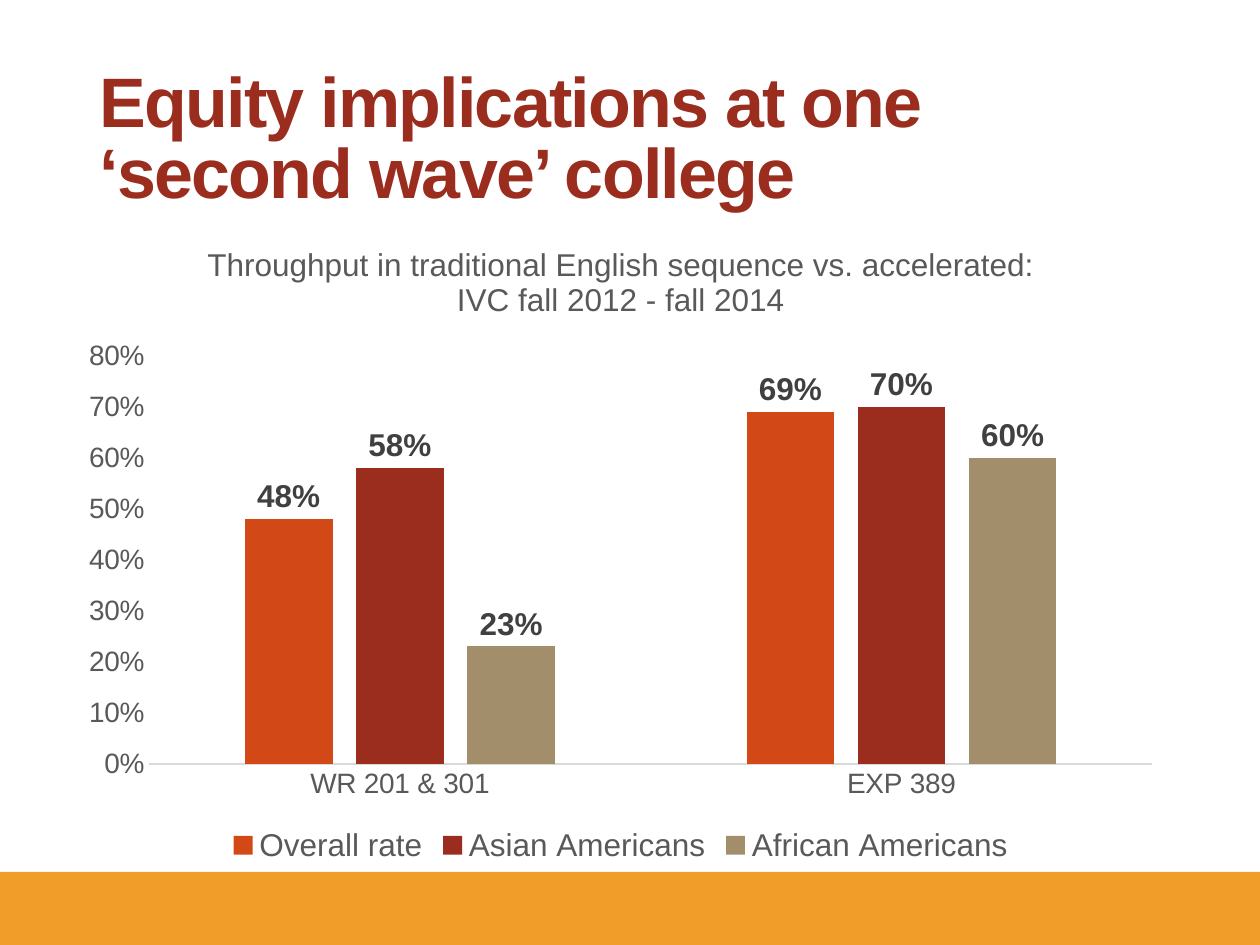
from dataclasses import dataclass

from pptx import Presentation
from pptx.chart.data import CategoryChartData
from pptx.dml.color import RGBColor as RGB
from pptx.enum.chart import XL_CHART_TYPE as ChartType
from pptx.enum.chart import XL_LABEL_POSITION as LabelPos
from pptx.enum.chart import XL_LEGEND_POSITION as LegendPos
from pptx.enum.chart import XL_TICK_MARK as Tick
from pptx.enum.shapes import MSO_SHAPE as Shape
from pptx.enum.text import MSO_ANCHOR as Anchor
from pptx.enum.text import MSO_AUTO_SIZE as AutoSize
from pptx.enum.text import PP_ALIGN as Align
from pptx.util import Pt


@dataclass(frozen=True)
class Theme:
    font: str = "Arial"
    red: str = "9B2D1F"
    orange: str = "D34817"
    tan: str = "A28E6A"
    band: str = "F09D2A"
    grey: str = "595959"
    dark: str = "404040"
    rule: str = "D9D9D9"
    title_size: float = 40
    title_leading: float = 41
    chart_size: float = 18
    axis_size: float = 16


@dataclass(frozen=True)
class Group:
    name: str
    rates: tuple[float, ...]
    color: str


THEME = Theme()
COURSES = ("WR 201 & 301", "EXP 389")
GROUPS = (
    Group("Overall rate", (0.48, 0.69), THEME.orange),
    Group("Asian Americans", (0.58, 0.70), THEME.red),
    Group("African Americans", (0.23, 0.60), THEME.tan),
)


def style_font(font, size: float, color: str, bold: bool = False) -> None:
    font.name = THEME.font
    font.size = Pt(size)
    font.bold = bold
    font.color.rgb = RGB.from_string(color)


def add_band(slide) -> None:
    sp = slide.shapes.add_shape(Shape.RECTANGLE, Pt(0), Pt(498.2), Pt(720), Pt(41.8))
    sp.shadow.inherit = False
    sp.fill.solid()
    sp.fill.fore_color.rgb = RGB.from_string(THEME.band)
    sp.line.fill.background()


def set_title(slide, text: str) -> None:
    sp = slide.shapes.title
    sp.left, sp.top, sp.width, sp.height = Pt(49.7), Pt(46.8), Pt(620.6), Pt(78.5)
    tf = sp.text_frame
    tf.word_wrap = True
    tf.auto_size = AutoSize.NONE
    tf.vertical_anchor = Anchor.BOTTOM
    p = tf.paragraphs[0]
    p.alignment = Align.LEFT
    p.line_spacing = Pt(THEME.title_leading)
    r = p.add_run()
    r.text = text
    style_font(r.font, THEME.title_size, THEME.red, bold=True)
    r.font._element.set("spc", "-100")  # tracking of -1 pt


def style_axes(chart) -> None:
    for axis in (chart.category_axis, chart.value_axis):
        axis.major_tick_mark = axis.minor_tick_mark = Tick.NONE
        axis.has_major_gridlines = False
        style_font(axis.tick_labels.font, THEME.axis_size, THEME.grey)
    line = chart.category_axis.format.line
    line.color.rgb = RGB.from_string(THEME.rule)
    line.width = Pt(0.75)
    values = chart.value_axis
    values.format.line.fill.background()
    values.minimum_scale, values.maximum_scale, values.major_unit = 0, 0.8, 0.1
    values.tick_labels.number_format = "0%"
    values.tick_labels.number_format_is_linked = False


def style_series(series, group: Group) -> None:
    series.format.fill.solid()
    series.format.fill.fore_color.rgb = RGB.from_string(group.color)
    series.invert_if_negative = False
    labels = series.data_labels
    labels.show_value = True
    labels.number_format = "0%"
    labels.number_format_is_linked = False
    labels.position = LabelPos.OUTSIDE_END
    style_font(labels.font, THEME.chart_size, THEME.dark, bold=True)


def add_rate_chart(slide, title: str) -> None:
    data = CategoryChartData(number_format="0%")
    data.categories = COURSES
    for group in GROUPS:
        data.add_series(group.name, group.rates)
    chart = slide.shapes.add_chart(
        ChartType.COLUMN_CLUSTERED, Pt(38.2), Pt(124.6), Pt(632.9), Pt(372.2), data
    ).chart
    style_font(chart.font, 10, "000000")

    # Chart title
    chart.has_title = True
    chart.chart_title.include_in_layout = False
    r = chart.chart_title.text_frame.paragraphs[0].add_run()
    r.text = title
    style_font(r.font, THEME.chart_size, THEME.grey)

    # Axes and columns
    style_axes(chart)
    plot = chart.plots[0]
    plot.gap_width, plot.overlap = 219, -27
    plot.vary_by_categories = False
    for series, group in zip(plot.series, GROUPS):
        style_series(series, group)

    # Legend
    chart.has_legend = True
    chart.legend.position = LegendPos.BOTTOM
    chart.legend.include_in_layout = False
    style_font(chart.legend.font, THEME.chart_size, THEME.grey)


def main() -> None:
    prs = Presentation()
    prs.slide_width, prs.slide_height = Pt(720), Pt(540)
    slide = prs.slides.add_slide(prs.slide_layouts[5])  # title only
    add_band(slide)
    set_title(slide, "Equity implications at one ‘second wave’ college")
    add_rate_chart(
        slide,
        "Throughput in traditional English sequence vs. accelerated: "
        "IVC fall 2012 - fall 2014",
    )
    prs.save("out.pptx")


if __name__ == "__main__":
    main()
